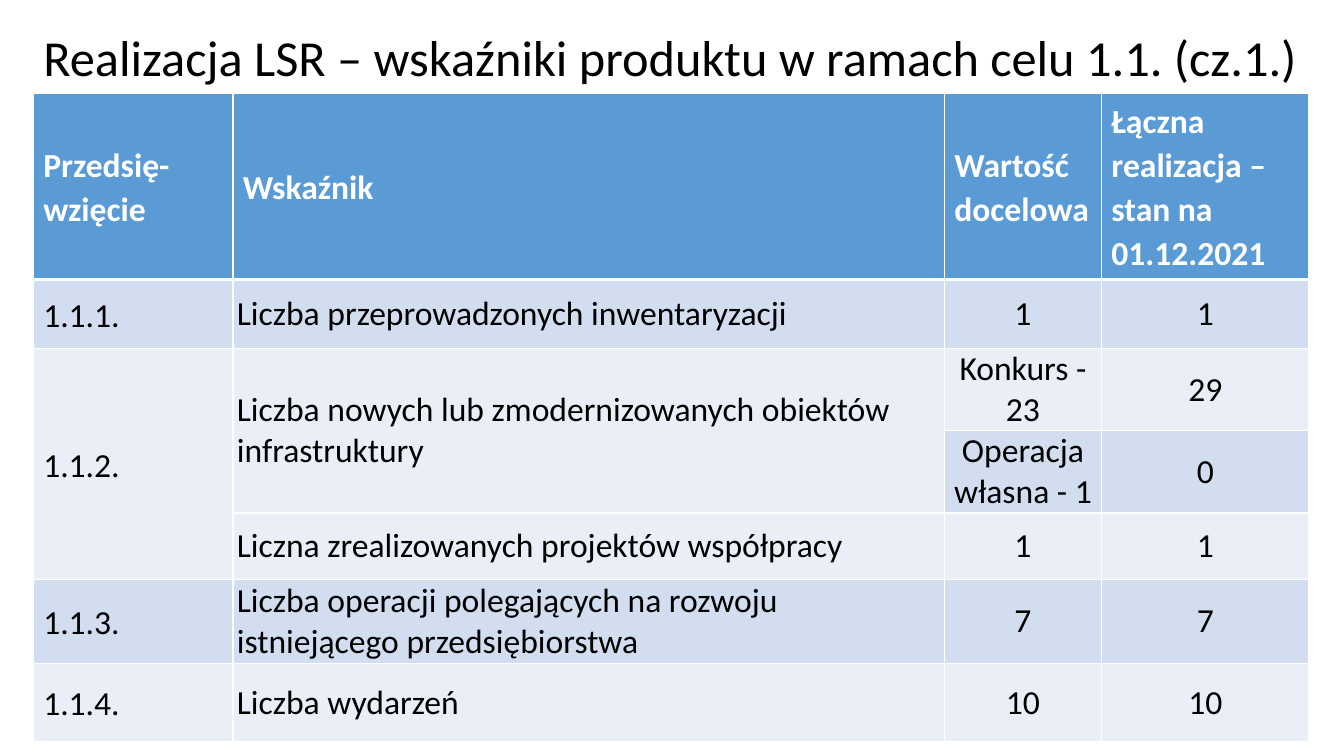
"""Build the slide listing product indicators for goal 1.1."""
import dataclasses
import typing

import lxml.etree
import pptx
import pptx.dml.color
import pptx.enum.text
import pptx.oxml.ns
import pptx.util

Cm = pptx.util.Cm
Pt = pptx.util.Pt
RGBColor = pptx.dml.color.RGBColor
Align = pptx.enum.text.PP_ALIGN
Anchor = pptx.enum.text.MSO_ANCHOR

FONT = "Calibri"
BLACK = RGBColor(0x00, 0x00, 0x00)
WHITE = RGBColor(0xFF, 0xFF, 0xFF)
HEADER_BLUE = RGBColor(0x5B, 0x9B, 0xD5)
BAND_DARK = RGBColor(0xD2, 0xDE, 0xEF)
BAND_LIGHT = RGBColor(0xEA, 0xEF, 0xF7)

TITLE = "Realizacja LSR – wskaźniki produktu w ramach celu 1.1. (cz.1.)"
LEFT, WIDTH = Cm(0.84), Cm(32.18)
ROW_HEIGHTS = (4.42, 1.75, 1.68, 2.01, 1.68, 2.11, 1.98)
ROWS = (
    ("Przedsię-wzięcie", "Wskaźnik", "Wartość docelowa",
     "Łączna realizacja – stan na 01.12.2021"),
    ("1.1.1.", "Liczba przeprowadzonych inwentaryzacji", "1", "1"),
    ("1.1.2.", "Liczba nowych lub zmodernizowanych obiektów infrastruktury",
     "Konkurs - 23", "29"),
    ("", "", "Operacja własna - 1", "0"),
    ("", "Liczna zrealizowanych projektów współpracy", "1", "1"),
    ("1.1.3.", "Liczba operacji polegających na rozwoju istniejącego przedsiębiorstwa",
     "7", "7"),
    ("1.1.4.", "Liczba wydarzeń", "10", "10"),
)
MERGES = (((2, 0), (4, 0)), ((2, 1), (3, 1)))


@dataclasses.dataclass(frozen=True)
class CellStyle:
    side_margin: float
    end_margin: float
    spacing: float
    align: typing.Any = Align.LEFT
    color: RGBColor = BLACK
    bold: bool = False


@dataclasses.dataclass(frozen=True)
class Column:
    width: float
    style: CellStyle


HEADER = CellStyle(0.25, 0.13, 1.07, color=WHITE, bold=True)
NUMBER = CellStyle(0.25, 0.13, 1.07)
INDICATOR = CellStyle(0.1, 0, 1.0)
VALUE = CellStyle(0, 0, 1.0, align=Align.CENTER)
COLUMNS = (Column(5.03, NUMBER), Column(17.93, INDICATOR),
           Column(3.96, VALUE), Column(5.23, VALUE))


def format_runs(para: typing.Any, size: int, color: RGBColor, bold: bool) -> None:
    for span in para.runs:
        span.font.name = FONT
        span.font.size = Pt(size)
        span.font.bold = bold
        span.font.color.rgb = color


def add_border(cell: typing.Any, side: str, points: int) -> None:
    qn = pptx.oxml.ns.qn
    properties = cell._tc.get_or_add_tcPr()
    line = lxml.etree.SubElement(properties, qn("a:ln" + side), w=str(Pt(points)))
    fill = lxml.etree.SubElement(line, qn("a:solidFill"))
    lxml.etree.SubElement(fill, qn("a:srgbClr"), val=str(WHITE))


def draw_cell(cell: typing.Any, text: str, style: CellStyle, row: int) -> None:
    cell.text_frame.text = text
    cell.vertical_anchor = Anchor.MIDDLE
    cell.margin_left = cell.margin_right = Cm(style.side_margin)
    cell.margin_top = cell.margin_bottom = Cm(style.end_margin)
    para = cell.text_frame.paragraphs[0]
    para.alignment = style.align
    para.line_spacing = style.spacing
    format_runs(para, 24, style.color, style.bold)
    for side in "LRTB":
        header_edge = (row, side) in ((0, "B"), (1, "T"))
        add_border(cell, side, 3 if header_edge else 1)
    cell.fill.solid()
    band = BAND_DARK if row % 2 else BAND_LIGHT
    cell.fill.fore_color.rgb = band if row else HEADER_BLUE


def draw_title(page: typing.Any) -> None:
    title = page.shapes.title
    title.left, title.top, title.width, title.height = LEFT, Cm(0), WIDTH, Cm(3.02)
    frame = title.text_frame
    frame.text = TITLE
    frame.word_wrap = True
    frame.auto_size = pptx.enum.text.MSO_AUTO_SIZE.NONE
    frame.vertical_anchor = Anchor.MIDDLE
    para = frame.paragraphs[0]
    para.alignment = Align.LEFT
    para.line_spacing = 0.9
    format_runs(para, 36, BLACK, False)


def draw_table(page: typing.Any) -> None:
    table = page.shapes.add_table(
        len(ROWS), len(COLUMNS), LEFT, Cm(2.36), WIDTH, Cm(sum(ROW_HEIGHTS))).table
    for index, column in enumerate(COLUMNS):
        table.columns[index].width = Cm(column.width)
    for row, (height, texts) in enumerate(zip(ROW_HEIGHTS, ROWS)):
        table.rows[row].height = Cm(height)
        for index, text in enumerate(texts):
            style = COLUMNS[index].style if row else HEADER
            draw_cell(table.cell(row, index), text, style, row)
    for first, last in MERGES:
        table.cell(*first).merge(table.cell(*last))


def main() -> None:
    deck = pptx.Presentation()
    deck.slide_width, deck.slide_height = Cm(33.87), Cm(19.05)
    page = deck.slides.add_slide(deck.slide_layouts[5])
    draw_title(page)
    draw_table(page)
    deck.save("out.pptx")


if __name__ == "__main__":
    main()
